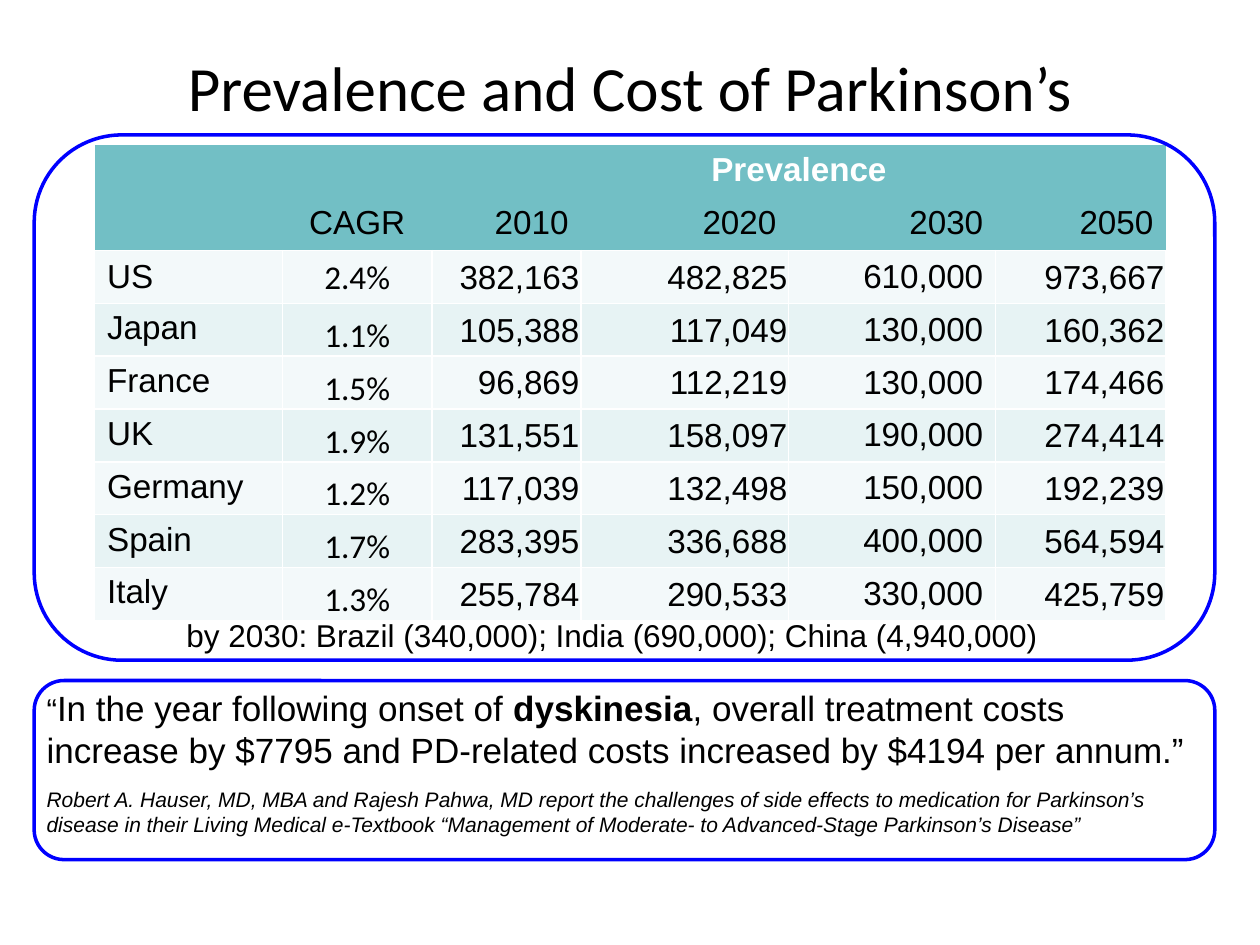
"""Build a slide on the prevalence and cost of Parkinson's."""
from dataclasses import dataclass

from lxml.etree import SubElement
from pptx import Presentation
from pptx.dml.color import RGBColor
from pptx.enum.shapes import MSO_SHAPE
from pptx.enum.text import MSO_ANCHOR, PP_ALIGN
from pptx.oxml.ns import qn
from pptx.util import Cm, Pt

BLACK = RGBColor(0x00, 0x00, 0x00)
WHITE = RGBColor(0xFF, 0xFF, 0xFF)
BLUE = RGBColor(0x00, 0x00, 0xFF)
TEAL = RGBColor(0x72, 0xBF, 0xC5)
BANDS = RGBColor(0xF3, 0xF9, 0xFA), RGBColor(0xE7, 0xF3, 0xF4)
PLAIN = "{2D5ABB26-0587-4C30-8999-92F81FD0307C}"
LEFT, CENTER, RIGHT = PP_ALIGN.LEFT, PP_ALIGN.CENTER, PP_ALIGN.RIGHT
TOP, MIDDLE, BOTTOM = MSO_ANCHOR.TOP, MSO_ANCHOR.MIDDLE, MSO_ANCHOR.BOTTOM
ROOMY = Cm(0.25), Cm(0.13), Cm(0.25), Cm(0.13)
TIGHT = Cm(0.03), Cm(0.03), Cm(0.03), Cm(0)


@dataclass(frozen=True)
class Box:
    left: float
    top: float
    width: float
    height: float

    def place(self) -> tuple:
        return Cm(self.left), Cm(self.top), Cm(self.width), Cm(self.height)


@dataclass(frozen=True)
class Column:
    head: str
    width: float
    align: PP_ALIGN
    pad: tuple = TIGHT
    font: str = "Arial"
    anchor: MSO_ANCHOR = MIDDLE


COLUMNS = (
    Column("", 3.78, LEFT, ROOMY, anchor=TOP),
    Column("CAGR", 3.02, CENTER, font="Calibri", anchor=BOTTOM),
    Column("2010", 3.0, RIGHT),
    Column("2020", 4.19, RIGHT),
    Column("2030", 4.17, RIGHT, ROOMY),
    Column("2050", 3.43, RIGHT),
)
ROWS = (
    ("US", "2.4%", "382,163", "482,825", "610,000", "973,667"),
    ("Japan", "1.1%", "105,388", "117,049", "130,000", "160,362"),
    ("France", "1.5%", "96,869", "112,219", "130,000", "174,466"),
    ("UK", "1.9%", "131,551", "158,097", "190,000", "274,414"),
    ("Germany", "1.2%", "117,039", "132,498", "150,000", "192,239"),
    ("Spain", "1.7%", "283,395", "336,688", "400,000", "564,594"),
    ("Italy", "1.3%", "255,784", "290,533", "330,000", "425,759"),
)
FRAMES = Box(0.69, 2.72, 23.8, 10.59), Box(0.69, 13.72, 23.8, 3.61)
QUOTE = (
    ("“", 18, False),
    ("In the year following onset of ", 20, False),
    ("dyskinesia", 20, True),
    (", overall treatment costs increase by $7795 and PD-related costs"
     " increased by $4194 per annum.”", 20, False),
)
SOURCE = ("Robert A. Hauser, MD, MBA and Rajesh Pahwa, MD report the challenges"
          " of side effects to medication for Parkinson’s disease in their Living"
          " Medical e-Textbook “Management of Moderate- to Advanced-Stage"
          " Parkinson’s Disease”")


def style(font, size: float, name: str = "Arial", color: RGBColor = BLACK,
          bold: bool = False) -> None:
    font.size, font.name, font.bold = Pt(size), name, bold
    font.color.rgb = color


def write(slide, box: Box, text: str, size: float, name: str = "Arial",
          align: PP_ALIGN = LEFT, anchor: MSO_ANCHOR = TOP, wrap: bool = True):
    frame = slide.shapes.add_textbox(*box.place()).text_frame
    frame.word_wrap, frame.vertical_anchor = wrap, anchor
    frame.text = text
    first = frame.paragraphs[0]
    first.alignment = align
    for run in first.runs:
        style(run.font, size, name)
    return frame


def edge(cell) -> None:
    props = cell._tc.get_or_add_tcPr()
    for side in ("lnL", "lnR", "lnT", "lnB"):
        line = SubElement(props, qn(f"a:{side}"), w=str(Pt(1)))
        fill = SubElement(line, qn("a:solidFill"))
        SubElement(fill, qn("a:srgbClr"), val=str(WHITE))


def paint(cell, fill: RGBColor, text: str, align: PP_ALIGN, pad: tuple = ROOMY,
          anchor: MSO_ANCHOR = TOP, name: str = "Arial",
          color: RGBColor = BLACK, bold: bool = False) -> None:
    cell.fill.solid()
    cell.fill.fore_color.rgb = fill
    cell.margin_left, cell.margin_top, cell.margin_right, cell.margin_bottom = pad
    cell.vertical_anchor = anchor
    cell.text_frame.text = text
    first = cell.text_frame.paragraphs[0]
    first.alignment = align
    style(first.font, 19, name, color, bold)
    for run in first.runs:
        style(run.font, 19, name, color, bold)


def tabulate(slide, box: Box) -> None:
    count = len(ROWS) + 2
    table = slide.shapes.add_table(count, len(COLUMNS), *box.place()).table
    table._tbl.tblPr.find(qn("a:tableStyleId")).text = PLAIN
    table.first_row = table.horz_banding = False
    for row in table.rows:
        row.height = Cm(box.height / count)
    for x, col in enumerate(COLUMNS):
        table.columns[x].width = Cm(col.width)
        group = "Prevalence" if x == 2 else ""
        paint(table.cell(0, x), TEAL, group, CENTER, color=WHITE, bold=True)
        paint(table.cell(1, x), TEAL, col.head, col.align)
        for y, row in enumerate(ROWS):
            cell = table.cell(y + 2, x)
            edge(cell)
            anchor = col.anchor if y else MIDDLE
            paint(cell, BANDS[y % 2], row[x], col.align, col.pad, anchor, col.font)
    table.cell(0, 2).merge(table.cell(0, 5))


def quote(slide, box: Box) -> None:
    frame = write(slide, box, "", 20)
    for text, size, bold in QUOTE:
        run = frame.paragraphs[0].add_run()
        run.text = text
        style(run.font, size, bold=bold)
    last = frame.add_paragraph()
    last.text = SOURCE
    last.space_before = Pt(9)
    style(last.runs[0].font, 12)
    last.runs[0].font.italic = True


def outline(slide, box: Box) -> None:
    shape = slide.shapes.add_shape(MSO_SHAPE.ROUNDED_RECTANGLE, *box.place())
    shape.shadow.inherit = False
    shape.fill.background()
    shape.line.color.rgb = BLUE
    shape.line.width = Pt(2)


def main() -> None:
    deck = Presentation()
    deck.slide_width, deck.slide_height = Cm(25.4), Cm(19.05)
    slide = deck.slides.add_slide(deck.slide_layouts[6])
    write(slide, Box(1.27, 0.76, 22.86, 1.96), "Prevalence and Cost of Parkinson’s",
          36, "Calibri", CENTER, MIDDLE)
    tabulate(slide, Box(1.91, 2.92, 21.59, 9.53))
    write(slide, Box(3.51, 12.29, 17.83, 1.02),
          "by 2030: Brazil (340,000); India (690,000); China (4,940,000)", 18,
          wrap=False)
    quote(slide, Box(0.69, 13.72, 23.6, 3.33))
    for frame in FRAMES:
        outline(slide, frame)
    deck.save("out.pptx")


if __name__ == "__main__":
    main()
